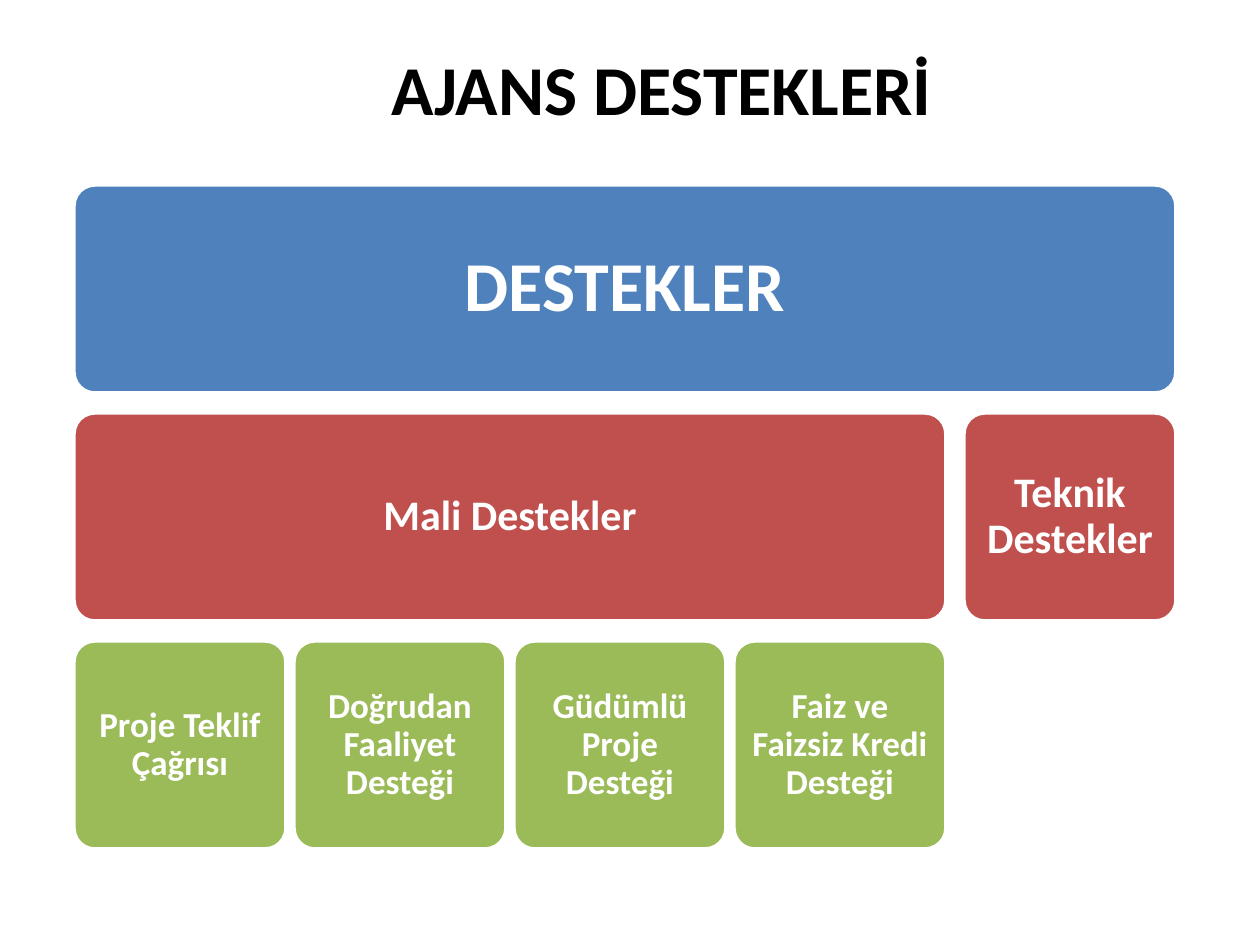
"""Build the agency supports slide: a title above a three-level block hierarchy."""
import pptx
import pptx.dml.color
import pptx.enum.shapes
import pptx.enum.text
import pptx.util

WHITE = pptx.dml.color.RGBColor(0xFF, 0xFF, 0xFF)
BLACK = pptx.dml.color.RGBColor(0x00, 0x00, 0x00)
BLUE = pptx.dml.color.RGBColor(0x4F, 0x81, 0xBD)
RED = pptx.dml.color.RGBColor(0xC0, 0x50, 0x4D)
GREEN = pptx.dml.color.RGBColor(0x9B, 0xBB, 0x59)

TITLE = "AJANS DESTEKLERİ"
HIERARCHY = ("DESTEKLER", [
    ("Mali Destekler", [
        ("Proje Teklif Çağrısı", []),
        ("Doğrudan Faaliyet Desteği", []),
        ("Güdümlü Proje Desteği", []),
        ("Faiz ve Faizsiz Kredi Desteği", []),
    ]),
    ("Teknik Destekler", []),
])
LEVELS = [
    {"fill": BLUE, "size": 40, "inset": 21, "child_gap": 18},
    {"fill": RED, "size": 24, "inset": 13, "child_gap": 8},
    {"fill": GREEN, "size": 20, "inset": 10, "child_gap": 0},
]

PX = 914400 // 126
SLIDE_WIDTH, SLIDE_HEIGHT = 1260, 945
TITLE_BOX = (339, 38, 645, 100)
TREE_LEFT, TREE_TOP = 74, 185
BLOCK_WIDTH, BLOCK_HEIGHT, ROW_GAP = 212, 208, 20


def to_emu(*lengths):
    return [length * PX for length in lengths]


def set_text(shape, text, size, color, inset=None, line_spacing=1.0):
    frame = shape.text_frame
    frame.word_wrap = True
    frame.vertical_anchor = pptx.enum.text.MSO_ANCHOR.MIDDLE
    if inset is not None:
        for side in ("left", "top", "right", "bottom"):
            setattr(frame, f"margin_{side}", inset * PX)
    paragraph = frame.paragraphs[0]
    paragraph.alignment = pptx.enum.text.PP_ALIGN.CENTER
    paragraph.line_spacing = line_spacing
    run = paragraph.add_run()
    run.text = text
    font_format = {"name": "Calibri", "size": pptx.util.Pt(size), "bold": True}
    for name, value in font_format.items():
        setattr(run.font, name, value)
    run.font.color.rgb = color


def tree_width(children, depth):
    if not children:
        return BLOCK_WIDTH
    widths = [tree_width(grandchildren, depth + 1) for _, grandchildren in children]
    return sum(widths) + LEVELS[depth]["child_gap"] * (len(children) - 1)


def add_tree(slide, node, left, depth=0):
    text, children = node
    level = LEVELS[depth]
    width = tree_width(children, depth)
    top = TREE_TOP + depth * (BLOCK_HEIGHT + ROW_GAP)
    block = slide.shapes.add_shape(
        pptx.enum.shapes.MSO_SHAPE.ROUNDED_RECTANGLE,
        *to_emu(left, top, width, BLOCK_HEIGHT))
    block.adjustments[0] = 0.1
    block.shadow.inherit = False
    block.fill.solid()
    block.fill.fore_color.rgb = level["fill"]
    block.line.color.rgb = WHITE
    block.line.width = pptx.util.Pt(2)
    set_text(block, text, level["size"], WHITE, level["inset"], 0.9)
    child_left = left
    for child in children:
        child_width = add_tree(slide, child, child_left, depth + 1)
        child_left += child_width + level["child_gap"]
    return width


def main():
    presentation = pptx.Presentation()
    presentation.slide_width, presentation.slide_height = to_emu(SLIDE_WIDTH, SLIDE_HEIGHT)
    slide = presentation.slides.add_slide(presentation.slide_layouts[6])
    title = slide.shapes.add_textbox(*to_emu(*TITLE_BOX))
    set_text(title, TITLE, 40, BLACK)
    add_tree(slide, HIERARCHY, TREE_LEFT)
    presentation.save("out.pptx")


if __name__ == "__main__":
    main()
